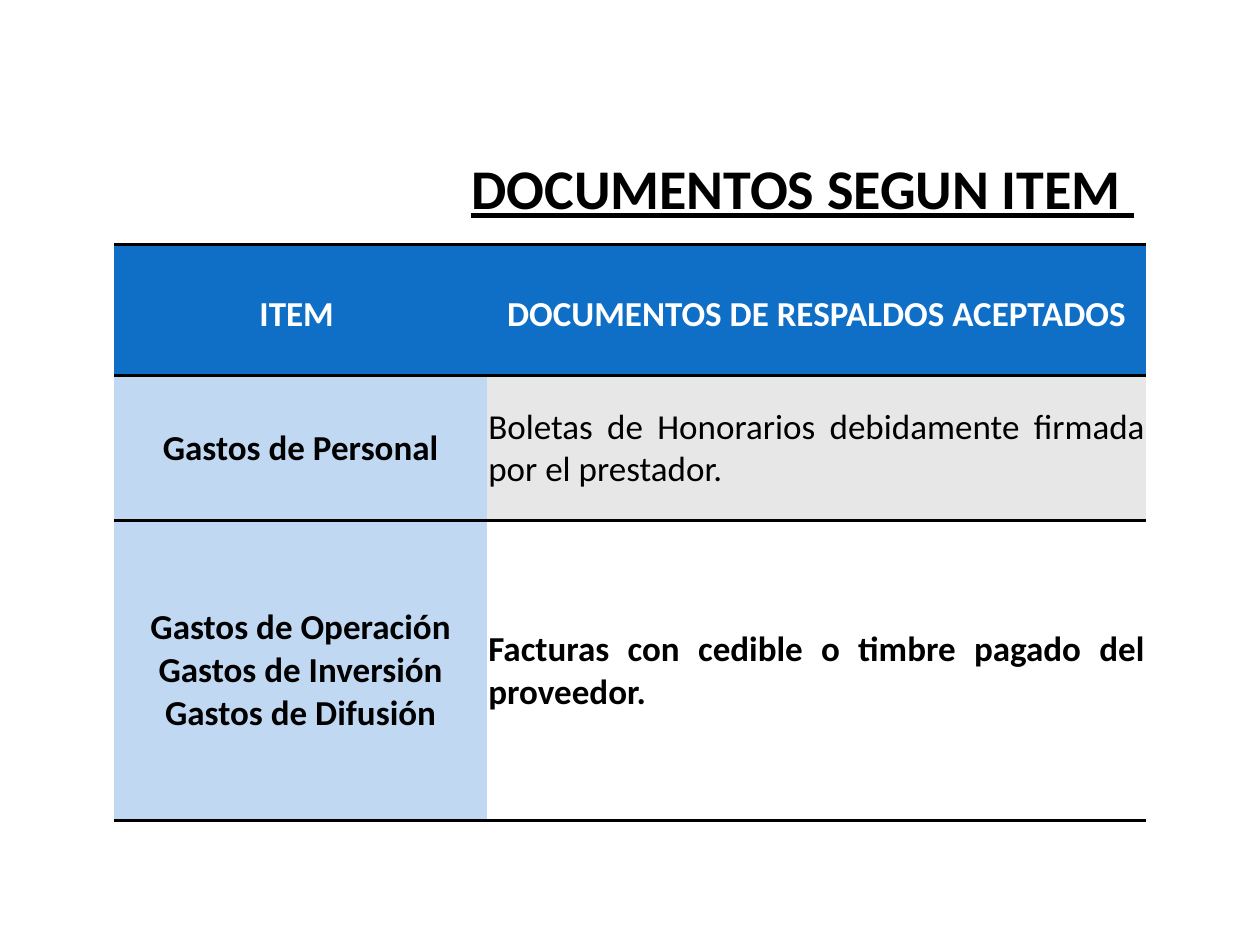
"""Build the slide that lists the accepted documents for each item."""
from lxml import etree
from pptx import Presentation
from pptx.dml.color import RGBColor
from pptx.enum.text import MSO_ANCHOR, PP_ALIGN
from pptx.oxml.ns import qn
from pptx.util import Pt

CENTER, RIGHT, JUSTIFY = PP_ALIGN.CENTER, PP_ALIGN.RIGHT, PP_ALIGN.JUSTIFY
TOP, MIDDLE = MSO_ANCHOR.TOP, MSO_ANCHOR.MIDDLE
BLACK = RGBColor(0x00, 0x00, 0x00)
WHITE = RGBColor(0xFF, 0xFF, 0xFF)
BLUE = RGBColor(0x0F, 0x6F, 0xC6)
PALE = RGBColor(0xC1, 0xD8, 0xF2)
GRAY = RGBColor(0xE7, 0xE7, 0xE7)
PLAIN = "{2D5ABB26-0587-4C30-8999-92F81FD0307C}"


def style(para, size, color, align, bold=True):
    para.alignment = align
    font = para.font
    font.name, font.size, font.bold = "Calibri", Pt(size), bold
    font.color.rgb = color


def border(cell, sides):
    props = cell._tc.get_or_add_tcPr()
    for index, side in enumerate(sides):
        line = etree.Element(qn("a:ln" + side), w=str(Pt(2)))
        fill = etree.SubElement(line, qn("a:solidFill"))
        etree.SubElement(fill, qn("a:srgbClr"), val=str(BLACK))
        props.insert(index, line)


deck = Presentation()
deck.slide_width, deck.slide_height = Pt(720), Pt(540)
slide = deck.slides.add_slide(deck.slide_layouts[6])

rows = [
    [("ITEM ", BLUE, True), ("DOCUMENTOS DE RESPALDOS ACEPTADOS", BLUE, True)],
    [("Gastos de Personal", PALE, True),
     ("Boletas de Honorarios debidamente firmada por el prestador.", GRAY, False)],
    [("Gastos de Operación\nGastos de Inversión\nGastos de Difusión", PALE, True),
     ("Facturas con cedible o timbre pagado del proveedor.", WHITE, True)],
]
widths = [213, 376.7]
heights = [75, 82.6, 171.4]
edges = ["TB", "T", "B"]

frame = slide.shapes.add_table(3, 2, Pt(65.3), Pt(139.7), Pt(sum(widths)), Pt(sum(heights)))
table = frame.table
table._tbl.tblPr.find(qn("a:tableStyleId")).text = PLAIN
for col, width in zip(table.columns, widths):
    col.width = Pt(width)

for r, row in enumerate(rows):
    table.rows[r].height = Pt(heights[r])
    for c, (text, fill, bold) in enumerate(row):
        cell = table.cell(r, c)
        cell.text = text
        cell.fill.solid()
        cell.fill.fore_color.rgb = fill
        if r == 0:
            cell.vertical_anchor = TOP
            cell.margin_top = Pt(28)
        else:
            cell.vertical_anchor = MIDDLE
            cell.margin_left = cell.margin_right = cell.margin_top = Pt(0.75)
            cell.margin_bottom = Pt(0)
        align = JUSTIFY if r and c else CENTER
        for para in cell.text_frame.paragraphs:
            style(para, 20, BLACK if r else WHITE, align, bold)
        border(cell, edges[r])

title = slide.shapes.add_textbox(Pt(93.6), Pt(88.6), Pt(561.6), Pt(42.5))
title.text_frame.word_wrap = True
head = title.text_frame.paragraphs[0]
head.text = "DOCUMENTOS SEGUN ITEM "
head.line_spacing = 0.9
head.space_before = Pt(7.5)
style(head, 32, BLACK, RIGHT)
head.font.underline = True

deck.save("out.pptx")
